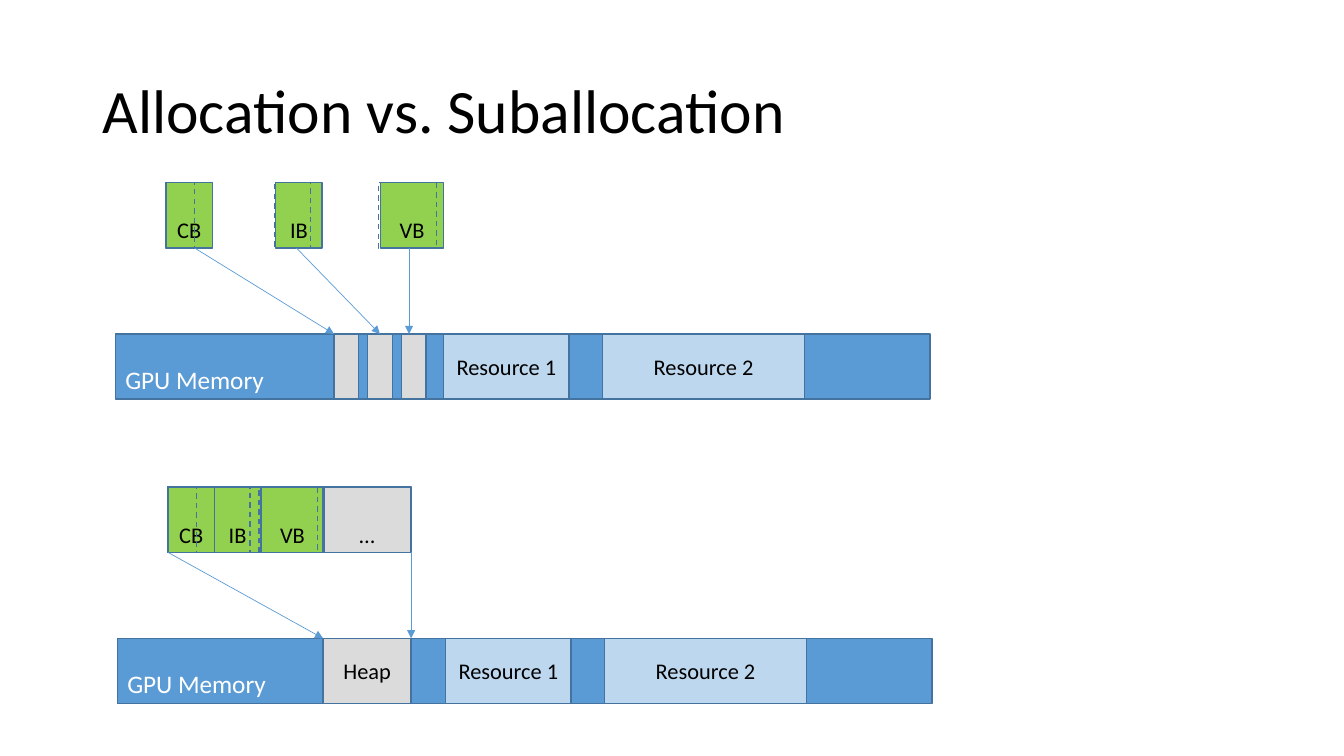
import pptx
import pptx.dml.color
import pptx.enum.dml
import pptx.enum.shapes
import pptx.enum.text
import pptx.oxml
import pptx.oxml.ns
import pptx.util

Inches = pptx.util.Inches
Anchor = pptx.enum.text.MSO_ANCHOR
Align = pptx.enum.text.PP_ALIGN

TITLE = "Allocation vs. Suballocation"
FONT = "Calibri"
BLACK, WHITE = "000000", "FFFFFF"
BLUE, PALE_BLUE, OUTLINE = "5B9BD5", "BDD7EE", "43739E"
GREEN, GRAY = "92D050", "DBDBDB"

BAR_HEIGHT = 0.66
MEMORY_WIDTH = 8.24
RESOURCES = [("Resource 2", 4.93, 2.04), ("Resource 1", 3.32, 1.27)]
BUFFERS = [("CB", 0.47, 0.29), ("IB", 0.47, 0.36), ("VB", 0.64, 0.59)]

SEPARATE = {
    "memory_left": 1.17, "memory_top": 3.38, "buffer_top": 1.85,
    "buffer_lefts": [1.68, 2.79, 3.85], "used_lefts": [1.68, 2.78, 3.83],
}
SHARED = {
    "memory_left": 1.19, "memory_top": 6.46, "buffer_top": 4.93,
    "buffer_lefts": [1.7, 2.17, 2.64], "used_lefts": [1.7, 2.17, 2.62],
}
SLOT_LEFT, SLOT_STEP, SLOT_WIDTH = 3.38, 0.34, 0.25
HEAP_LEFT, HEAP_WIDTH = 3.27, 0.89

deck = pptx.Presentation()
deck.slide_width = Inches(13.6)
deck.slide_height = Inches(7.65)
page = deck.slides.add_slide(deck.slide_layouts[6])


def color(hex_text):
    return pptx.dml.color.RGBColor.from_string(hex_text)


def write(shape, text, size, ink, align, anchor):
    frame = shape.text_frame
    frame.word_wrap = True
    frame.vertical_anchor = anchor
    para = frame.paragraphs[0]
    para.alignment = align
    span = para.add_run()
    span.text = text
    span.font.name = FONT
    span.font.size = pptx.util.Pt(size)
    span.font.color.rgb = color(ink)
    return para


def add_bar(left, top, width, fill=None, dashed=False):
    bar = page.shapes.add_shape(
        pptx.enum.shapes.MSO_SHAPE.RECTANGLE,
        Inches(left), Inches(top), Inches(width), Inches(BAR_HEIGHT))
    bar.shadow.inherit = False
    if fill:
        bar.fill.solid()
        bar.fill.fore_color.rgb = color(fill)
    else:
        bar.fill.background()
    bar.line.color.rgb = color(OUTLINE)
    bar.line.width = pptx.util.Pt(1)
    if dashed:
        bar.line.dash_style = pptx.enum.dml.MSO_LINE.DASH
    return bar


def label(bar, text, anchor):
    write(bar, text, 16.3, BLACK, Align.CENTER, anchor)


def add_arrow(start_x, start_y, end_x, end_y):
    arrow = page.shapes.add_connector(
        pptx.enum.shapes.MSO_CONNECTOR.STRAIGHT,
        Inches(start_x), Inches(start_y), Inches(end_x), Inches(end_y))
    arrow.line.color.rgb = color(BLUE)
    arrow.line.width = pptx.util.Pt(0.5)
    head = pptx.oxml.parse_xml(
        f'<a:tailEnd {pptx.oxml.ns.nsdecls("a")} type="triangle"/>')
    arrow.line._get_or_add_ln().append(head)
    arrow._element.spPr.append(pptx.oxml.parse_xml(
        f'<a:effectLst {pptx.oxml.ns.nsdecls("a")}/>'))
    return arrow


def add_memory(scene):
    left, top = scene["memory_left"], scene["memory_top"]
    memory = add_bar(left, top, MEMORY_WIDTH, BLUE)
    write(memory, "GPU Memory", 18.4, WHITE, Align.LEFT, Anchor.BOTTOM)
    for name, offset, width in RESOURCES:
        label(add_bar(left + offset, top, width, PALE_BLUE), name, Anchor.MIDDLE)


def add_buffers(scene):
    top = scene["buffer_top"]
    for left, (name, width, used) in zip(scene["buffer_lefts"], BUFFERS):
        label(add_bar(left, top, width, GREEN), name, Anchor.BOTTOM)
    for left, (name, width, used) in zip(scene["used_lefts"], BUFFERS):
        add_bar(left, top, used, dashed=True)


title = page.shapes.add_textbox(
    Inches(0.94), Inches(0.41), Inches(11.73), Inches(1.48))
heading = write(title, TITLE, 44.9, BLACK, Align.LEFT, Anchor.MIDDLE)
heading.line_spacing = 0.9

add_memory(SHARED)
heap_top, shared_top = SHARED["memory_top"], SHARED["buffer_top"]
heap_right = HEAP_LEFT + HEAP_WIDTH
shared_left = SHARED["buffer_lefts"][0]
shared_bottom = shared_top + BAR_HEIGHT
label(add_bar(HEAP_LEFT, heap_top, HEAP_WIDTH, GRAY), "Heap", Anchor.MIDDLE)
add_bar(shared_left, shared_top, heap_right - shared_left, GRAY)
add_buffers(SHARED)
label(add_bar(HEAP_LEFT, shared_top, HEAP_WIDTH), "…", Anchor.BOTTOM)
add_arrow(shared_left, shared_bottom, HEAP_LEFT, heap_top)
add_arrow(heap_right, shared_bottom, heap_right, heap_top)

add_memory(SEPARATE)
slot_top = SEPARATE["memory_top"]
buffer_bottom = SEPARATE["buffer_top"] + BAR_HEIGHT
slots = [add_bar(SLOT_LEFT + index * SLOT_STEP, slot_top, SLOT_WIDTH, GRAY)
         for index in range(len(BUFFERS))]
add_buffers(SEPARATE)
add_arrow(1.97, buffer_bottom, SLOT_LEFT, slot_top)
add_arrow(3, buffer_bottom, 3.85, slot_top).end_connect(slots[1], 0)
add_arrow(4.14, buffer_bottom, 4.14, slot_top)

deck.save("out.pptx")
